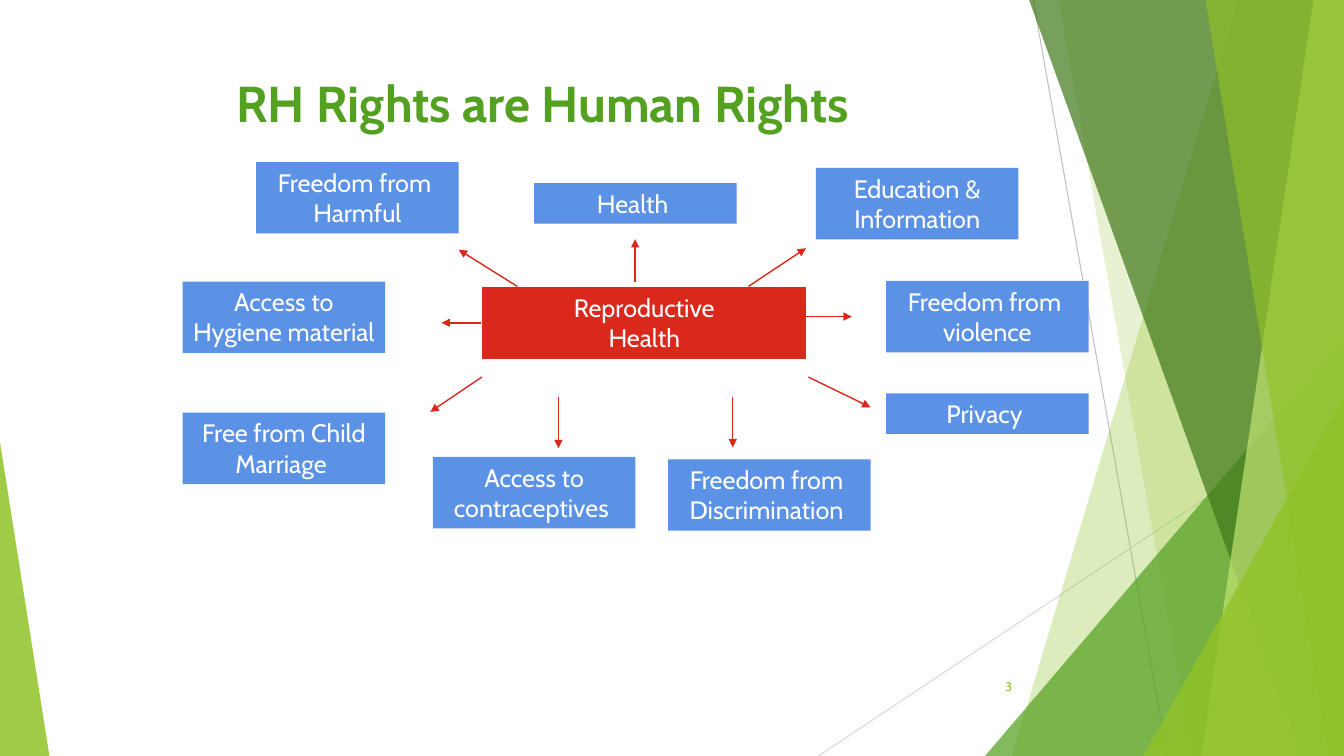
from dataclasses import dataclass
from typing import Optional, Union

import lxml.etree
import pptx
import pptx.dml.color
import pptx.enum.shapes
import pptx.enum.text
import pptx.oxml.ns
import pptx.util

Pt = pptx.util.Pt
SHAPE = pptx.enum.shapes.MSO_SHAPE
ALIGN = pptx.enum.text.PP_ALIGN
ANCHOR = pptx.enum.text.MSO_ANCHOR
AUTO = pptx.enum.text.MSO_AUTO_SIZE
WIDTH, HEIGHT = 960, 540


@dataclass(frozen=True)
class Theme:
    font: str = "Cabin"
    title: float = 36
    label: float = 18
    number: float = 9
    white: str = "FFFFFF"
    blue: str = "5B92E5"
    red: str = "DA291C"
    green: str = "54A021"
    lime: str = "90C226"
    pale: str = "C0E474"
    dark: str = "3F7819"
    grey: str = "BFBFBF"
    light_grey: str = "D9D9D9"


THEME = Theme()


@dataclass(frozen=True)
class Band:
    top: float
    bottom: float
    color: str
    opacity: int


@dataclass(frozen=True)
class Wedge:
    left: float
    top: float
    width: float
    apex: float
    color: str
    opacity: int


@dataclass(frozen=True)
class Box:
    left: float
    top: float
    lines: tuple[str, ...]
    height: float = 51
    width: float = 144.7
    fill: str = THEME.blue
    outline: Optional[str] = None


@dataclass(frozen=True)
class Line:
    x1: float
    y1: float
    x2: float
    y2: float
    color: str = THEME.red
    weight: float = 1
    arrow: bool = True


RAYS = [
    Line(738, 0, 833.8, HEIGHT, THEME.grey, 0.75, False),
    Line(WIDTH, 290.2, 584.6, HEIGHT, THEME.light_grey, 0.75, False),
]
FACETS: list[Union[Band, Wedge]] = [
    Band(884.2, 722.9, THEME.lime, 30),
    Band(756, 851.8, THEME.lime, 20),
    Wedge(703.6, 239.8, 256.4, 1, THEME.green, 72),
    Band(735.1, 929.5, THEME.dark, 70),
    Band(938.2, 858.2, THEME.pale, 70),
    Band(861.1, 949, THEME.lime, 65),
    Wedge(816.6, 283, 143.4, 1, THEME.lime, 80),
    Wedge(0, 316, 35.3, 0, THEME.lime, 85),
]
BOXES = [
    Box(344.6, 205.2, ("Reproductive", "Health"), width=231.1,
        fill=THEME.red, outline=THEME.red),
    Box(182.9, 115.8, ("Freedom from ", "Harmful")),
    Box(130.4, 201.1, ("Access to Hygiene material ",)),
    Box(130.4, 294.8, ("Free from Child Marriage ",)),
    Box(309.2, 326.4, ("Access to contraceptives ",)),
    Box(477.2, 328.1, ("Freedom from ", "Discrimination ")),
    Box(632.9, 281, ("Privacy ",), height=29),
    Box(582.8, 120, ("Education & Information",)),
    Box(632.9, 200.7, ("Freedom from ", "violence")),
    Box(381.5, 130.8, ("Health ",), height=29),
]
ARROWS = [
    Line(453.7, 201.2, 453.7, 170.8),
    Line(369.5, 204.6, 327.7, 178.4),
    Line(534.6, 204.6, 575.7, 177.3),
    Line(343.6, 230.6, 315.4, 230.6),
    Line(576, 226.1, 608.4, 226.1),
    Line(344.2, 269.3, 307.4, 294.2),
    Line(577.4, 269.3, 621.8, 290.9),
    Line(398.9, 283.7, 398.9, 320.2),
    Line(523.4, 283.7, 523.4, 319.5),
]


def rgb(color: str):
    return pptx.dml.color.RGBColor.from_string(color)


def add_child(parent, tag: str, **attributes: str):
    return lxml.etree.SubElement(parent, pptx.oxml.ns.qn(tag), **attributes)


def paint(sp, color: str, opacity: int = 100, outline: Optional[str] = None) -> None:
    sp.shadow.inherit = False
    sp.fill.solid()
    sp.fill.fore_color.rgb = rgb(color)
    if opacity < 100:
        fill = sp.fill._xPr.find(pptx.oxml.ns.qn("a:solidFill"))
        add_child(fill[0], "a:alpha", val=str(opacity * 1000))
    if outline:
        sp.line.color.rgb = rgb(outline)
        sp.line.width = Pt(0.75)
    else:
        sp.line.fill.background()


def write(tf, lines: tuple[str, ...], size: float, color: str,
          align=ALIGN.CENTER, anchor=ANCHOR.TOP, bold: bool = False) -> None:
    tf.word_wrap = True
    tf.vertical_anchor = anchor
    for i, line in enumerate(lines):
        p = tf.add_paragraph() if i else tf.paragraphs[0]
        p.alignment = align
        r = p.add_run()
        r.text = line
        r.font.name = THEME.font
        r.font.size = Pt(size)
        r.font.bold = bold
        r.font.color.rgb = rgb(color)


def draw_line(s, line: Line) -> None:
    sp = s.shapes.add_connector(
        pptx.enum.shapes.MSO_CONNECTOR.STRAIGHT,
        Pt(line.x1), Pt(line.y1), Pt(line.x2), Pt(line.y2))
    sp.line.color.rgb = rgb(line.color)
    sp.line.width = Pt(line.weight)
    if line.arrow:
        add_child(sp.line._get_or_add_ln(), "a:tailEnd", type="triangle")
    add_child(sp._element.spPr, "a:effectLst")


def draw_facet(s, facet: Union[Band, Wedge]) -> None:
    if isinstance(facet, Band):
        builder = s.shapes.build_freeform(Pt(facet.top), 0)
        builder.add_line_segments([
            (Pt(WIDTH), 0), (Pt(WIDTH), Pt(HEIGHT)), (Pt(facet.bottom), Pt(HEIGHT))])
        sp = builder.convert_to_shape()
    else:
        sp = s.shapes.add_shape(
            SHAPE.ISOSCELES_TRIANGLE, Pt(facet.left), Pt(facet.top),
            Pt(facet.width), Pt(HEIGHT - facet.top))
        sp.adjustments[0] = facet.apex
    paint(sp, facet.color, facet.opacity)


def draw_box(s, box: Box) -> None:
    sp = s.shapes.add_shape(
        SHAPE.RECTANGLE, Pt(box.left), Pt(box.top), Pt(box.width), Pt(box.height))
    paint(sp, box.fill, outline=box.outline)
    tf = sp.text_frame
    tf.margin_left = tf.margin_right = Pt(6)
    write(tf, box.lines, THEME.label, THEME.white)
    tf.auto_size = AUTO.SHAPE_TO_FIT_TEXT


def main() -> None:
    prs = pptx.Presentation()
    prs.slide_width, prs.slide_height = Pt(WIDTH), Pt(HEIGHT)
    s = prs.slides.add_slide(prs.slide_layouts[6])
    for ray in RAYS:
        draw_line(s, ray)
    for facet in FACETS:
        draw_facet(s, facet)
    title = s.shapes.add_textbox(Pt(53.3), Pt(48.2), Pt(676.8), Pt(103.7))
    write(title.text_frame, ("RH Rights are Human Rights ",), THEME.title,
          THEME.green, bold=True)
    for box in BOXES:
        draw_box(s, box)
    for arrow in ARROWS:
        draw_line(s, arrow)
    number = s.shapes.add_textbox(Pt(676.1), Pt(475.9), Pt(54), Pt(28.8))
    write(number.text_frame, ("3",), THEME.number, THEME.lime,
          align=ALIGN.RIGHT, anchor=ANCHOR.MIDDLE)
    prs.save("out.pptx")


if __name__ == "__main__":
    main()
